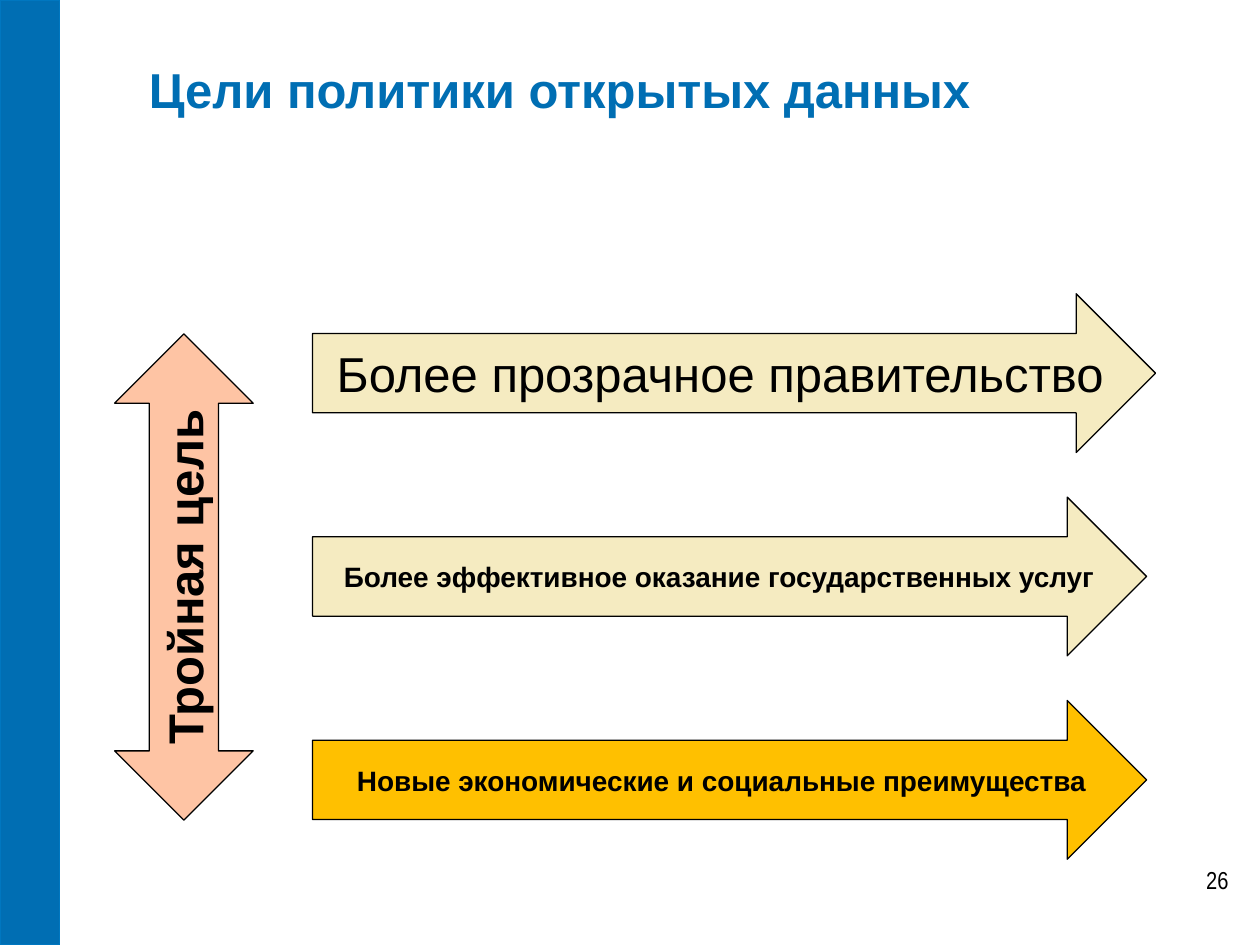
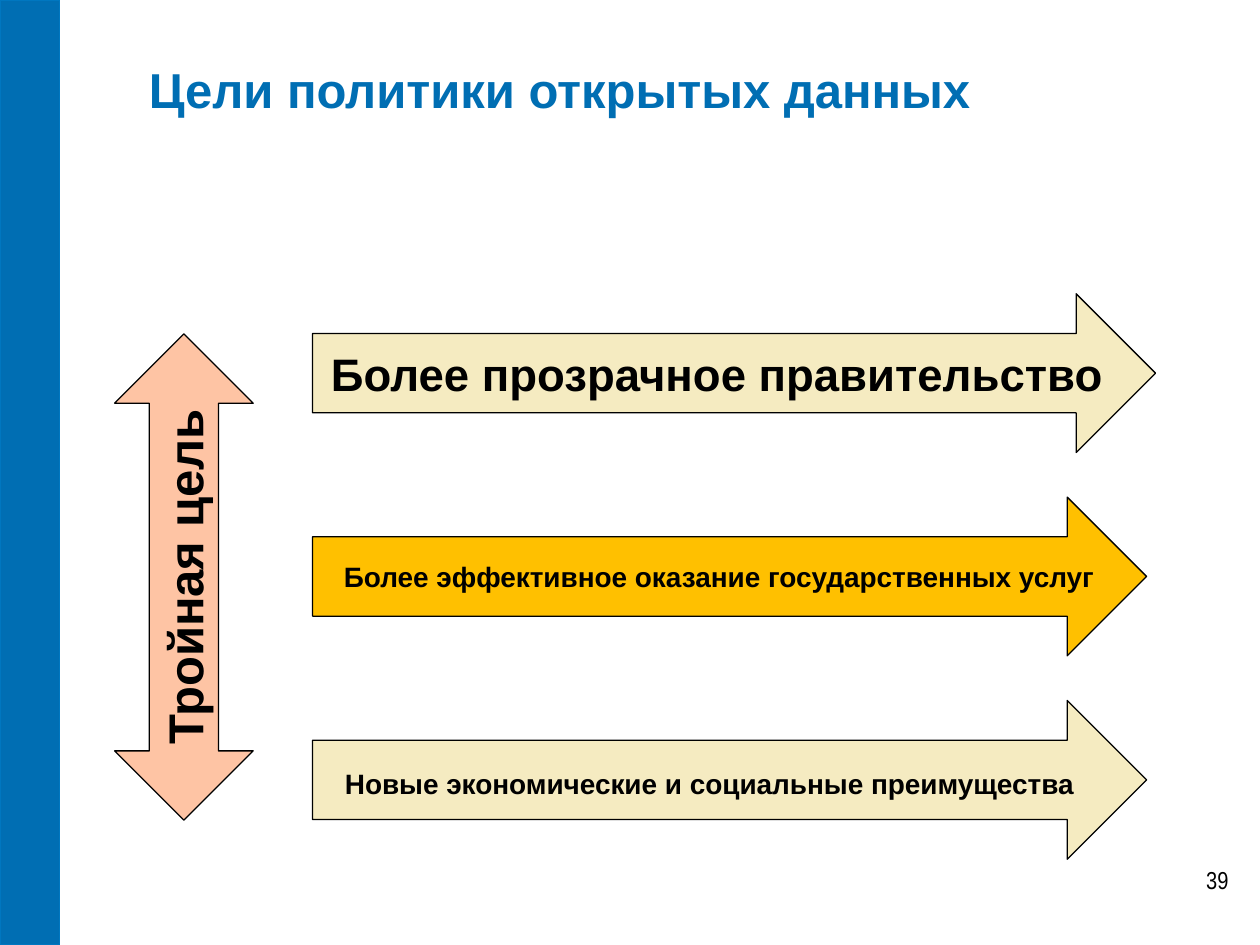
import pptx
import pptx.dml.color
import pptx.enum.shapes
import pptx.enum.text
import pptx.util

Pt = pptx.util.Pt
Color = pptx.dml.color.RGBColor
Shape = pptx.enum.shapes.MSO_SHAPE
Align = pptx.enum.text.PP_ALIGN
Anchor = pptx.enum.text.MSO_ANCHOR

BLUE = Color(0x00, 0x6E, 0xB3)
BAND_EDGE = Color(0x00, 0x77, 0xC0)
CREAM = Color(0xF5, 0xEB, 0xC1)
GOLD = Color(0xFF, 0xC0, 0x00)
PEACH = Color(0xFE, 0xC4, 0xA4)
BLACK = Color(0x00, 0x00, 0x00)

ARROW_LEFT, ARROW_TOP, ARROW_HEIGHT, ARROW_STEP = 178.6, 167.9, 90.7, 116.2
INSET_X, INSET_Y = 7.2, 3.6

TITLE = "Цели политики открытых данных"
GOAL = "Тройная цель"
TRANSPARENCY = "Более прозрачное правительство"
SERVICES = "Более эффективное оказание государственных услуг"
BENEFITS = "Новые экономические и социальные преимущества"

# Per slide: page number and arrows from top to bottom
# (text, width, size, bold, fill, extra right inset, extra top inset)
SLIDES = [
    ("26", [
        (TRANSPARENCY, 481.7, 28, False, CREAM, 0, 0),
        (SERVICES, 476.6, 16, True, CREAM, 0, 0),
        (BENEFITS, 476.6, 16, True, GOLD, 4.5, 0),
    ]),
    ("39", [
        (TRANSPARENCY, 481.7, 26, True, CREAM, 0, 0),
        (SERVICES, 476.6, 16, True, GOLD, 0, 0),
        (BENEFITS, 476.6, 16, True, CREAM, 11.4, 3.4),
    ]),
]


def write_text(box, text, size=28, font="Arial", color=BLACK, bold=True,
               align=Align.LEFT, anchor=Anchor.MIDDLE, wrap=False,
               extra_right=0, extra_top=0):
    frame = box.text_frame
    frame.word_wrap = wrap
    frame.auto_size = pptx.enum.text.MSO_AUTO_SIZE.NONE
    frame.vertical_anchor = anchor
    frame.margin_left = Pt(INSET_X)
    frame.margin_right = Pt(INSET_X + extra_right)
    frame.margin_top = Pt(INSET_Y + extra_top)
    frame.margin_bottom = Pt(INSET_Y)
    para = frame.paragraphs[0]
    para.alignment = align
    span = para.add_run()
    span.text = text
    span.font.name = font
    span.font.size = Pt(size)
    span.font.bold = bold
    span.font.color.rgb = color


def add_block(page, kind, left, top, width, height, fill, edge=BLACK):
    block = page.shapes.add_shape(kind, Pt(left), Pt(top), Pt(width), Pt(height))
    block.shadow.inherit = False
    block.fill.solid()
    block.fill.fore_color.rgb = fill
    block.line.color.rgb = edge
    block.line.width = Pt(0.75)
    return block


deck = pptx.Presentation()
deck.slide_width = Pt(720)
deck.slide_height = Pt(540)
layout = deck.slide_layouts[5]
pages = [deck.slides.add_slide(layout) for _ in SLIDES]

# Side band, moved to the layout so that every slide shows it
band = add_block(pages[0], Shape.RECTANGLE, 0, 0, 34, 540, BLUE, BAND_EDGE)
layout.shapes.element.append(band.element)

for page, (number, arrows) in zip(pages, SLIDES):
    # Title
    title = page.shapes.title
    title.left, title.top = Pt(77.8), Pt(30.2)
    title.width, title.height = Pt(588.2), Pt(41.8)
    write_text(title, TITLE, color=BLUE, wrap=True)

    # Arrows with the three aims
    for row, (text, width, size, bold, fill, right, top) in enumerate(arrows):
        arrow = add_block(page, Shape.RIGHT_ARROW, ARROW_LEFT,
                          ARROW_TOP + row * ARROW_STEP, width, ARROW_HEIGHT, fill)
        write_text(arrow, text, size=size, bold=bold, align=Align.RIGHT,
                   extra_right=right, extra_top=top)

    # Page number
    number_box = page.shapes.add_textbox(Pt(541.4), Pt(491), Pt(167.8), Pt(37.4))
    write_text(number_box, number, size=14, font="Arial Narrow", bold=False,
               align=Align.RIGHT, anchor=Anchor.TOP, wrap=True)

    # Double arrow with the text running upwards
    goal = add_block(page, Shape.UP_DOWN_ARROW, 65.5, 190.8, 79.2, 277.9, PEACH)
    write_text(goal, GOAL, align=Align.CENTER)
    goal.element.txBody.bodyPr.set("vert", "vert270")

deck.save("out.pptx")
